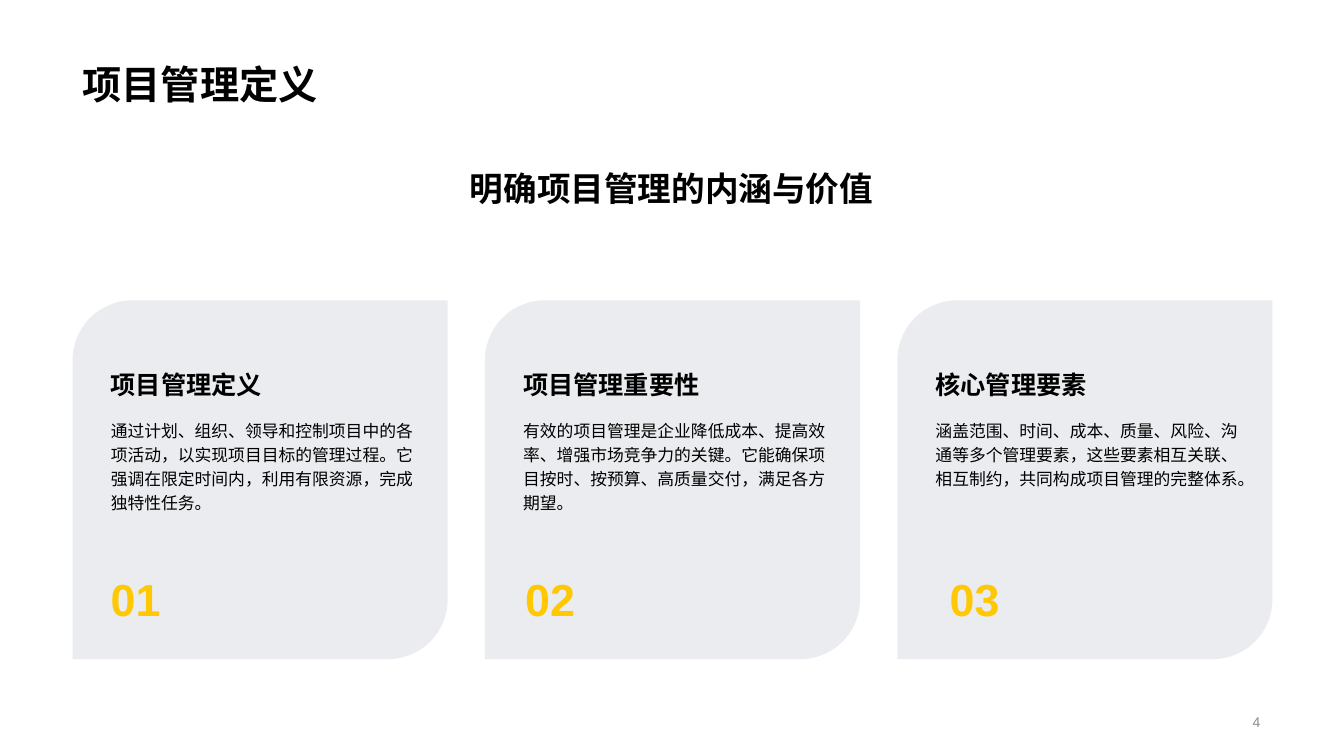
from dataclasses import dataclass

from lxml.etree import SubElement as Sub
from pptx import Presentation
from pptx.dml.color import RGBColor as Color
from pptx.enum.shapes import MSO_SHAPE as Shape
from pptx.enum.text import MSO_ANCHOR as Anchor, MSO_AUTO_SIZE as Fit, PP_ALIGN as Align
from pptx.oxml.ns import qn
from pptx.util import Pt

PX = 9144


@dataclass(frozen=True)
class Theme:
    """Colours, fonts and type sizes of the slide."""
    ink: str = "000000"
    card: str = "768394"
    gold: str = "FFC803"
    grey: str = "8C8C8C"
    alpha: int = 15
    han: str = "Noto Sans CJK SC"
    latin: str = "Arial"
    title: int = 28
    lead: int = 24
    head: int = 18
    body: int = 12
    num: int = 32
    foot: int = 10


T = Theme()
CARDS = [
    ("项目管理定义", "通过计划、组织、领导和控制项目中的各项活动，以实现项目目标的管理过程。它强调在限定时间内，利用有限资源，完成独特性任务。", 28),
    ("项目管理重要性", "有效的项目管理是企业降低成本、提高效率、增强市场竞争力的关键。它能确保项目按时、按预算、高质量交付，满足各方期望。", 30),
    ("核心管理要素", "涵盖范围、时间、成本、质量、风险、沟通等多个管理要素，这些要素相互关联、相互制约，共同构成项目管理的完整体系。", 42),
]


def emu(*box):
    """Turn px lengths into EMU."""
    return [n * PX for n in box]


def write(shape, text, size, face=T.han, ink=T.ink, bold=False,
          align=Align.LEFT, anchor=Anchor.TOP, wrap=True, lines=1.0):
    """Fill a shape with one formatted paragraph."""
    frame = shape.text_frame
    frame.word_wrap = wrap
    frame.auto_size = Fit.NONE
    frame.vertical_anchor = anchor
    para = frame.paragraphs[0]
    para.text = text
    para.alignment = align
    para.line_spacing = lines
    para.space_before = Pt(0)
    font = para.font
    font.size = Pt(size)
    font.bold = bold
    font.color.rgb = Color.from_string(ink)
    font.name = face
    props = para._p.pPr.find(qn("a:defRPr"))
    Sub(props, qn("a:ea")).set("typeface", face)


def label(slide, box, text, size, **style):
    """Add a text box at the given px box."""
    write(slide.shapes.add_textbox(*emu(*box)), text, size, **style)


def header(slide, box):
    """Place the title and the centred lead line."""
    x, y, w, h = box
    title = slide.shapes.title
    title.left, title.top, title.width, title.height = emu(x, y, w, 98)
    write(title, "项目管理定义", T.title, bold=True, anchor=Anchor.BOTTOM)
    label(slide, (x, y + h - 57, w, 57), "明确项目管理的内涵与价值", T.lead,
          bold=True, align=Align.CENTER, anchor=Anchor.BOTTOM)


def card(slide, box, num, head, body, shift):
    """Place one numbered card."""
    x, y, w, h = box
    panel = slide.shapes.add_shape(Shape.ROUND_2_DIAG_RECTANGLE, *emu(*box))
    panel.shadow.inherit = False
    panel.line.fill.background()
    panel.fill.solid()
    panel.fill.fore_color.rgb = Color.from_string(T.card)
    tint = panel._element.spPr.find(qn("a:solidFill"))[0]
    Sub(tint, qn("a:alpha")).set("val", str(T.alpha * 1000))
    label(slide, (x + 28, y + 23, w - 51, 80), head, T.head,
          bold=True, anchor=Anchor.BOTTOM)
    label(slide, (x + 28, y + 110, w - 51, 139), body, T.body, lines=1.2)
    label(slide, (x + shift, y + h - 92, 70, 64), f"{num:02}", T.num,
          face=T.latin, ink=T.gold, bold=True, anchor=Anchor.MIDDLE, wrap=False)


def cards(slide, box, gap):
    """Share the box out among equal cards."""
    x, y, w, h = box
    wide = (w - gap * (len(CARDS) - 1)) // len(CARDS)
    for i, data in enumerate(CARDS):
        card(slide, (x + i * (wide + gap), y, wide, h), i + 1, *data)


def footer(slide, box):
    """Place the page number."""
    label(slide, box, "4", T.foot, face=T.latin, ink=T.grey,
          align=Align.RIGHT, anchor=Anchor.MIDDLE)


def main():
    """Build and save the deck."""
    deck = Presentation()
    deck.slide_width, deck.slide_height = emu(1333, 750)
    slide = deck.slides.add_slide(deck.slide_layouts[5])
    header(slide, (72, 14, 1188, 198))
    cards(slide, (72, 298, 1190, 356), 37)
    footer(slide, (860, 701, 400, 30))
    deck.save("out.pptx")


if __name__ == "__main__":
    main()
